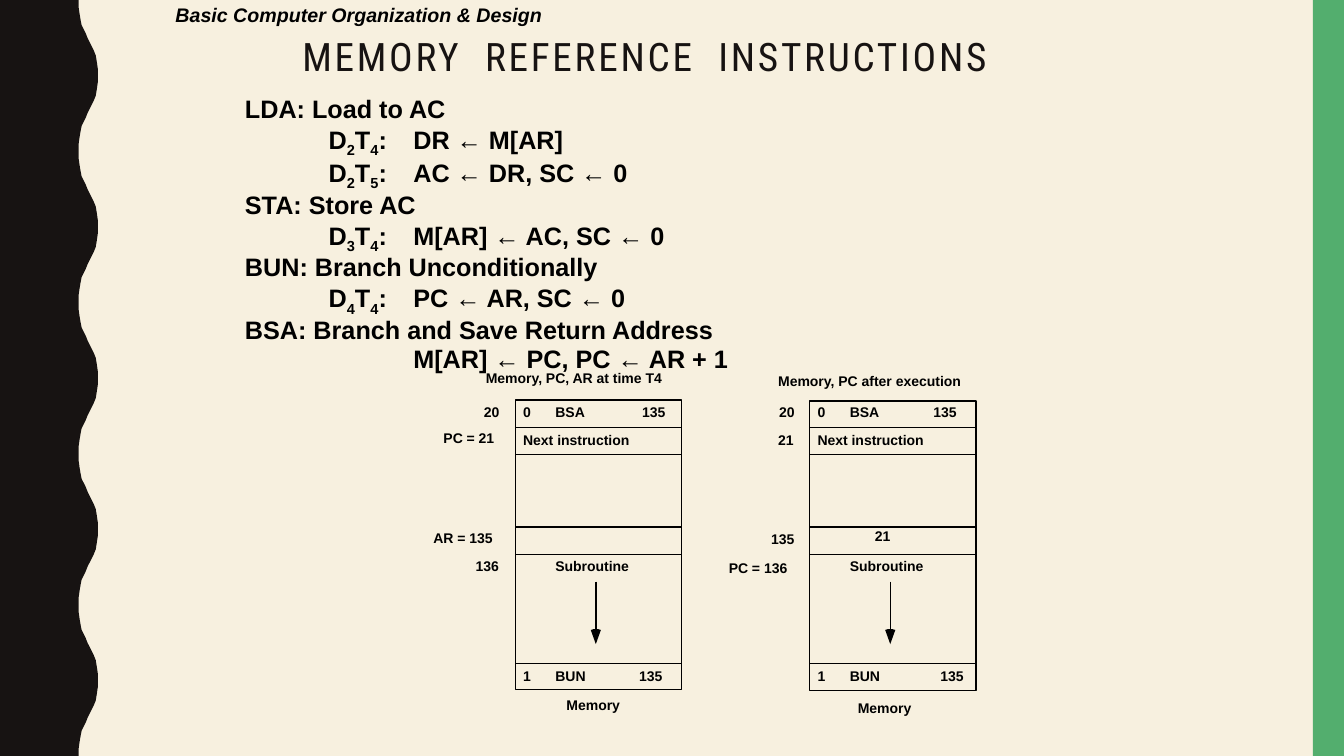
from lxml.etree import SubElement
from pptx import Presentation
from pptx.dml.color import RGBColor
from pptx.enum.shapes import MSO_CONNECTOR, MSO_SHAPE
from pptx.enum.text import MSO_ANCHOR, MSO_AUTO_SIZE
from pptx.oxml.ns import qn
from pptx.util import Inches, Pt

COLORS = {name: RGBColor.from_string(value) for name, value in {
    "paper": "F7F0DF", "dark": "171312", "green": "53AE6E", "ink": "000000",
}.items()}

deck = Presentation()
deck.slide_width, deck.slide_height = Inches(13.33), Inches(7.5)
slide = deck.slides.add_slide(deck.slide_layouts[6])
slide.background.fill.solid()
slide.background.fill.fore_color.rgb = COLORS["paper"]
shapes = slide.shapes


def add_text(text, left, top, width, height=0.27, size=10, inset=(0.1, 0.05), wrap=False):
    """Add bold Arial text; an underscore makes the next character a subscript."""
    frame = shapes.add_textbox(Inches(left), Inches(top), Inches(width), Inches(height)).text_frame
    frame.word_wrap = wrap
    frame.auto_size = MSO_AUTO_SIZE.SHAPE_TO_FIT_TEXT
    frame.margin_left = frame.margin_right = Inches(inset[0])
    frame.margin_top = frame.margin_bottom = Inches(inset[1])
    for number, line in enumerate(text.split("\n")):
        paragraph = frame.paragraphs[0] if number == 0 else frame.add_paragraph()
        first, *rest = line.split("_")
        paragraph.text = first
        for piece in rest:
            subscript = paragraph.add_run()
            subscript.text = piece[0]
            subscript._r.get_or_add_rPr().set("baseline", "-25000")
            paragraph.add_run().text = piece[1:]
        for run in paragraph.runs:
            run.font.name, run.font.size, run.font.bold = "Arial", Pt(size), True
            run.font.color.rgb = COLORS["ink"]
    return frame


def add_outline(points, color):
    """Add a filled closed outline without a border."""
    corners = [(Inches(x), Inches(y)) for x, y in points]
    builder = shapes.build_freeform(*corners[0])
    builder.add_line_segments(corners[1:], close=True)
    outline = builder.convert_to_shape()
    outline.shadow.inherit = False
    outline.fill.solid()
    outline.fill.fore_color.rgb = COLORS[color]
    outline.line.fill.background()


# Wavy left edge: a half wave, mirrored and repeated five times
half_wave = [(0.78, 0), (0.78, 0.07), (0.79, 0.14), (0.8, 0.2), (0.81, 0.25),
             (0.83, 0.29), (0.85, 0.33), (0.87, 0.38), (0.89, 0.42), (0.91, 0.46),
             (0.93, 0.5), (0.95, 0.55), (0.96, 0.61), (0.97, 0.68), (0.97, 0.75)]
wave = half_wave + [(x, 1.5 - y) for x, y in half_wave[-2::-1]]
edge = [(x, y + 1.5 * period) for period in range(5) for x, y in wave]
add_outline([(0, 0), *edge, (0, 7.5)], "dark")

# Green right band
band = shapes.add_shape(MSO_SHAPE.RECTANGLE, Inches(13.02), 0, Inches(0.31), Inches(7.5))
band.shadow.inherit = False
band.fill.solid()
band.fill.fore_color.rgb = COLORS["green"]
band.line.fill.background()

# Title and running header
title = add_text("MEMORY  REFERENCE  INSTRUCTIONS", 2.9, 0.29, 7.83, 0.58, 28, wrap=True)
title.auto_size = MSO_AUTO_SIZE.NONE
title.vertical_anchor = MSO_ANCHOR.MIDDLE
title.paragraphs[0].line_spacing = 0.9
title_run = title.paragraphs[0].runs[0]
title_run.font.name, title_run.font.bold = "Roboto Condensed", False
title_run.font.color.rgb = COLORS["dark"]
title_run._r.get_or_add_rPr().set("spc", "200")

header = add_text("Basic Computer Organization & Design", 1.67, 0, 3.8, 0.29, 14, (0.07, 0.03))
header.paragraphs[0].runs[0].font.italic = True

# Instructions with their micro-operations
instructions = add_text(
    "LDA: Load to AC\n"
    "\tD_2T_4:\tDR ← M[AR]\n"
    "\tD_2T_5:\tAC ← DR, SC ← 0\n"
    "STA: Store AC\n"
    "\tD_3T_4:\tM[AR] ← AC, SC ← 0\n"
    "BUN: Branch Unconditionally\n"
    "\tD_4T_4:\tPC ← AR, SC ← 0\n"
    "BSA: Branch and Save Return Address\n"
    "\t\tM[AR] ← PC, PC ← AR + 1",
    2.36, 0.91, 5.2, 2.68, 18, (0.07, 0.03), wrap=True)
for paragraph in instructions.paragraphs:
    paragraph.line_spacing = 0.97
    tab_list = SubElement(paragraph._p.get_or_add_pPr(), qn("a:tabLst"))
    for stop in (0.83, 1.67):
        SubElement(tab_list, qn("a:tab"), pos=str(Inches(stop)), algn="l")

# Memory maps: left and top of the frame, then the labels that differ
memory_maps = [
    (5.11, 3.97, [
        ("Memory, PC, AR at time T4", 4.72, 3.62, 1.97),
        ("20", 4.7, 3.95, 0.37), ("PC = 21", 4.3, 4.21, 0.72),
        ("AR = 135", 4.2, 5.2, 0.8), ("136", 4.62, 5.48, 0.44),
        ("135", 6.27, 3.95, 0.44), ("135", 6.24, 6.57, 0.44),
        ("Memory", 5.52, 6.86, 0.75)]),
    (8.03, 3.98, [
        ("Memory, PC after execution", 7.62, 3.65, 2.04),
        ("20", 7.63, 3.95, 0.37), ("21", 7.62, 4.23, 0.37),
        ("135", 7.55, 5.21, 0.44), ("PC = 136", 7.13, 5.5, 0.8),
        ("135", 9.16, 3.95, 0.44), ("135", 9.23, 6.57, 0.44),
        ("21", 8.58, 5.18, 0.37), ("Memory", 8.41, 6.89, 0.75)]),
]
# Labels found in both maps, placed from the left of the frame
shared_labels = [
    ("0", -0.02, 3.95, 0.29), ("BSA", 0.3, 3.95, 0.51),
    ("Next instruction", -0.02, 4.23, 1.28), ("Subroutine", 0.3, 5.48, 0.95),
    ("1", -0.02, 6.57, 0.29), ("BUN", 0.3, 6.57, 0.51),
]
map_width, map_height = 1.65, 2.87

for left, top, labels in memory_maps:
    frame = shapes.add_shape(MSO_SHAPE.RECTANGLE, Inches(left), Inches(top),
                             Inches(map_width), Inches(map_height))
    frame.shadow.inherit = False
    frame.fill.background()
    frame.line.color.rgb = COLORS["ink"]
    frame.line.width = Pt(1)

    # Row dividers and the shaft of the subroutine arrow
    arrow_x = left + 0.8
    lines = [(left, y, left + map_width, y) for y in (4.24, 4.51, 5.23, 5.5, 6.58)]
    lines.append((arrow_x, 5.77, arrow_x, 6.26))
    for ends in lines:
        line = shapes.add_connector(MSO_CONNECTOR.STRAIGHT, *map(Inches, ends))
        line.line.color.rgb = COLORS["ink"]
        line.line.width = Pt(1)
        SubElement(line._element.spPr, qn("a:effectLst"))

    # Arrowhead with a slightly rounded top
    add_outline([(arrow_x - 0.05, 6.25), (arrow_x - 0.02, 6.24), (arrow_x + 0.02, 6.24),
                 (arrow_x + 0.05, 6.25), (arrow_x, 6.39)], "ink")

    for text, offset, label_top, width in shared_labels:
        add_text(text, left + offset, label_top, width)
    for label in labels:
        add_text(*label)

deck.save("out.pptx")
